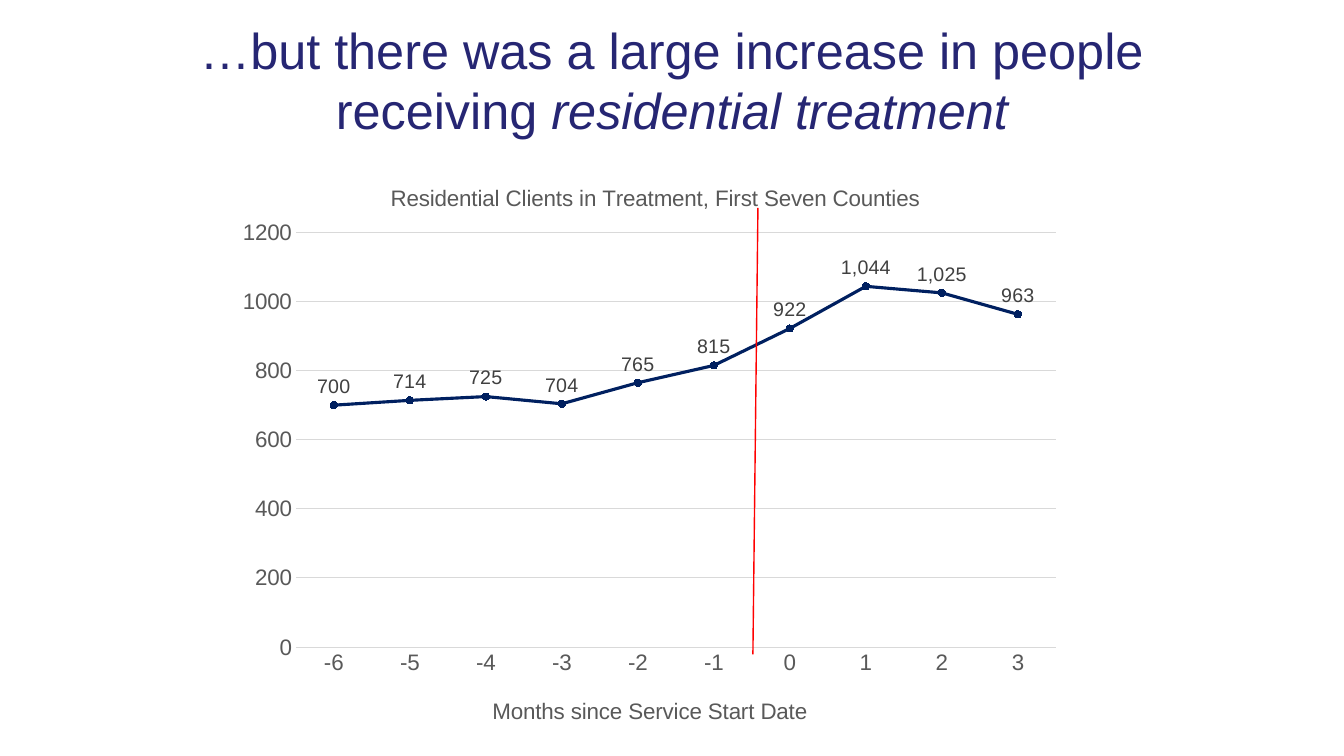
"""Build the slide on residential treatment clients."""
from lxml import etree
from pptx import Presentation
from pptx.chart.data import CategoryChartData
from pptx.dml.color import RGBColor
from pptx.enum.chart import XL_CHART_TYPE, XL_LABEL_POSITION, XL_MARKER_STYLE, XL_TICK_MARK
from pptx.enum.shapes import MSO_CONNECTOR
from pptx.enum.text import MSO_ANCHOR, PP_ALIGN
from pptx.oxml.ns import qn
from pptx.util import Pt

LINE = XL_CHART_TYPE.LINE_MARKERS
ABOVE = XL_LABEL_POSITION.ABOVE
CIRCLE = XL_MARKER_STYLE.CIRCLE
NONE = XL_TICK_MARK.NONE
STRAIGHT = MSO_CONNECTOR.STRAIGHT
MIDDLE = MSO_ANCHOR.MIDDLE
CENTER = PP_ALIGN.CENTER
COLORS = {"title": "262673", "text": "595959", "label": "404040",
          "grid": "D9D9D9", "navy": "002060", "red": "FF0000"}


def style(font, size, color):
    font.name = "Arial"
    font.size = Pt(size)
    font.bold = False
    font.color.rgb = RGBColor.from_string(COLORS[color])


def place(node, index, **values):
    for old in node.findall(qn("c:layout")):
        node.remove(old)
    layout = etree.Element(qn("c:layout"))
    manual = etree.SubElement(layout, qn("c:manualLayout"))
    for tag, value in values.items():
        etree.SubElement(manual, qn("c:" + tag)).set("val", str(value))
    node.insert(index, layout)


deck = Presentation()
deck.slide_width, deck.slide_height = Pt(960), Pt(540)
slide = deck.slides.add_slide(deck.slide_layouts[5])

title = slide.shapes.title
title.left, title.top, title.width, title.height = Pt(66), Pt(29), Pt(828), Pt(68)
frame = title.text_frame
frame.word_wrap = True
frame.vertical_anchor = MIDDLE
frame.margin_top, frame.margin_bottom = Pt(0), Pt(13)
para = frame.paragraphs[0]
para.alignment = CENTER
para.add_run().text = "…but there was a large increase in people receiving "
stress = para.add_run()
stress.text = "residential treatment"
stress.font.italic = True
style(para.font, 36, "title")

data = CategoryChartData()
data.categories = [str(month) for month in range(-6, 4)]
data.add_series("Series 1", [700, 714, 725, 704, 765, 815, 922, 1044, 1025, 963])
chart = slide.shapes.add_chart(LINE, Pt(161), Pt(112), Pt(606), Pt(416), data).chart
chart.has_legend = False
style(chart.font, 16, "text")

months, count = chart.category_axis, chart.value_axis
heads = [(chart.chart_title, "Residential Clients in Treatment, First Seven Counties", 0.19, 0.04),
         (months.axis_title, "Months since Service Start Date", 0.31, 0.92)]
for head, text, x, y in heads:
    head.text_frame.text = text
    style(head.text_frame.paragraphs[0].font, 16, "text")
    place(head._element, 1, xMode="edge", yMode="edge", x=x, y=y)
place(chart._chartSpace.chart.plotArea, 0, layoutTarget="inner",
      xMode="edge", yMode="edge", x=0.083, y=0.13, w=0.896, h=0.712)

for axis in (months, count):
    axis.major_tick_mark = axis.minor_tick_mark = NONE
    style(axis.tick_labels.font, 16, "text")
count.minimum_scale, count.maximum_scale, count.major_unit = 0, 1200, 200
count.format.line.fill.background()
for line in (months.format.line, count.major_gridlines.format.line):
    line.color.rgb = RGBColor.from_string(COLORS["grid"])
    line.width = Pt(0.75)

navy = RGBColor.from_string(COLORS["navy"])
series = chart.plots[0].series[0]
series.smooth = False
series.format.line.color.rgb = navy
series.format.line.width = Pt(2.25)
marker = series.marker
marker.style, marker.size = CIRCLE, 5
marker.format.fill.solid()
marker.format.fill.fore_color.rgb = navy
marker.format.line.color.rgb = navy
labels = series.data_labels
labels.show_value = True
labels.position = ABOVE
labels.number_format = "#,##0"
labels.number_format_is_linked = False
style(labels.font, 14, "label")

start = slide.shapes.add_connector(STRAIGHT, Pt(537.8), Pt(467.5), Pt(541.4), Pt(148.5))
start.line.color.rgb = RGBColor.from_string(COLORS["red"])
start.line.width = Pt(1)
etree.SubElement(start._element.spPr, qn("a:effectLst"))

deck.save("out.pptx")
